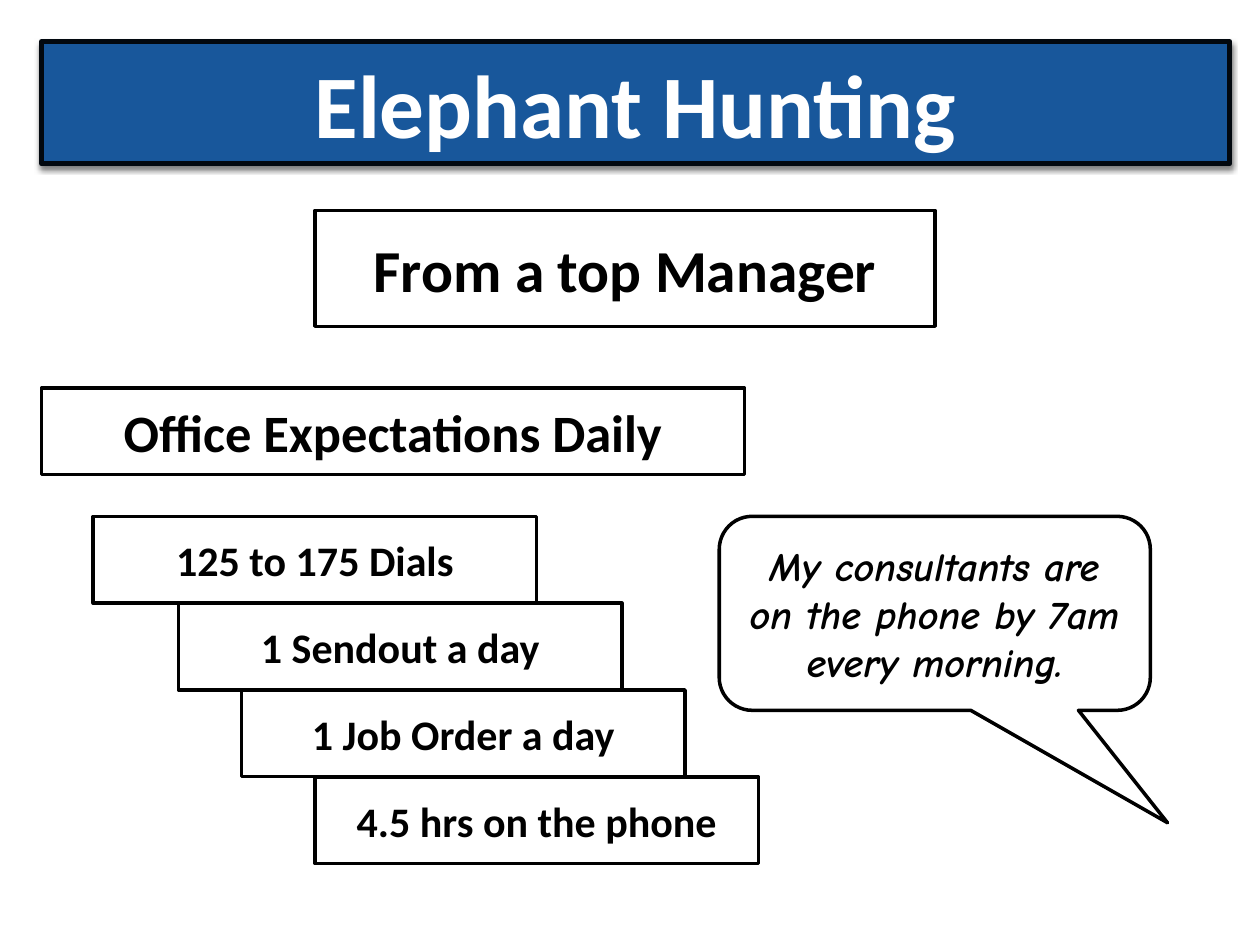
import pptx
import pptx.dml.color
import pptx.enum.shapes
import pptx.enum.text
import pptx.oxml
import pptx.oxml.ns
import pptx.util
from pptx.util import Cm

SHAPES = pptx.enum.shapes.MSO_SHAPE
BLACK, WHITE, BLUE, NAVY = "000000", "FFFFFF", "18579B", "02080F"
BAR_HEIGHT = 1.75
STEP_TOP = 10.41
STEPS = [
    (1.88, "125 to 175 Dials"),
    (3.6, "1 Sendout a day"),
    (4.87, "1 Job Order a day"),
    (6.35, "4.5 hrs on the phone"),
]


def color(value):
    return pptx.dml.color.RGBColor.from_string(value)


def write_text(shape, text, size, font="Calibri", ink=BLACK, italic=False, after=0):
    frame = shape.text_frame
    frame.word_wrap = True
    frame.vertical_anchor = pptx.enum.text.MSO_ANCHOR.MIDDLE
    paragraph = frame.paragraphs[0]
    paragraph.alignment = pptx.enum.text.PP_ALIGN.CENTER
    paragraph.space_after = pptx.util.Pt(after)
    run = paragraph.add_run()
    run.text = text
    run.font.name = font
    run.font.size = pptx.util.Pt(size)
    run.font.bold = True
    run.font.italic = italic
    run.font.color.rgb = color(ink)


def add_panel(slide, left, top, width, height, kind=SHAPES.RECTANGLE,
              fill=WHITE, line=BLACK, weight=2):
    """Add a filled, outlined shape; lengths are in centimetres."""
    panel = slide.shapes.add_shape(kind, Cm(left), Cm(top), Cm(width), Cm(height))
    panel.shadow.inherit = False
    panel.fill.solid()
    panel.fill.fore_color.rgb = color(fill)
    panel.line.color.rgb = color(line)
    panel.line.width = pptx.util.Pt(weight)
    return panel


def add_drop_shadow(shape):
    """Put a soft half-transparent shadow straight below the shape."""
    effects = shape._element.spPr.find(pptx.oxml.ns.qn("a:effectLst"))
    effects.append(pptx.oxml.parse_xml(
        f'<a:outerShdw {pptx.oxml.ns.nsdecls("a")} blurRad="{pptx.util.Pt(3)}" '
        f'dist="{pptx.util.Pt(2)}" dir="5400000" rotWithShape="0">'
        f'<a:srgbClr val="{BLACK}"><a:alpha val="50000"/></a:srgbClr></a:outerShdw>'))


def add_title(slide):
    banner = add_panel(slide, 0.84, 0.84, 23.95, 2.46, fill=BLUE, line=NAVY, weight=3)
    add_drop_shadow(banner)
    write_text(banner, "Elephant Hunting", 51, ink=WHITE)


def add_steps(slide):
    for row, (left, text) in enumerate(STEPS):
        step = add_panel(slide, left, STEP_TOP + row * BAR_HEIGHT, 8.94, BAR_HEIGHT)
        write_text(step, text, 24, after=6)


def add_quote(slide):
    quote = add_panel(slide, 14.5, STEP_TOP, 8.69, 3.91,
                      kind=SHAPES.ROUNDED_RECTANGULAR_CALLOUT)
    for index, value in enumerate((0.54, 1.08, 0.17)):
        quote.adjustments[index] = value
    write_text(quote, "My consultants are on the phone by 7am every morning.", 23,
               font="Comic Neue", italic=True)


def main():
    deck = pptx.Presentation()
    deck.slide_width, deck.slide_height = Cm(25.4), Cm(19.05)
    slide = deck.slides.add_slide(deck.slide_layouts[6])

    add_title(slide)
    expectations = add_panel(slide, 0.84, 7.82, 14.17, BAR_HEIGHT)
    write_text(expectations, "Office Expectations Daily", 30, after=6)
    speaker = add_panel(slide, 6.35, 4.24, 12.5, 2.34)
    write_text(speaker, "From a top Manager", 34)
    add_steps(slide)
    add_quote(slide)

    deck.save("out.pptx")


if __name__ == "__main__":
    main()
